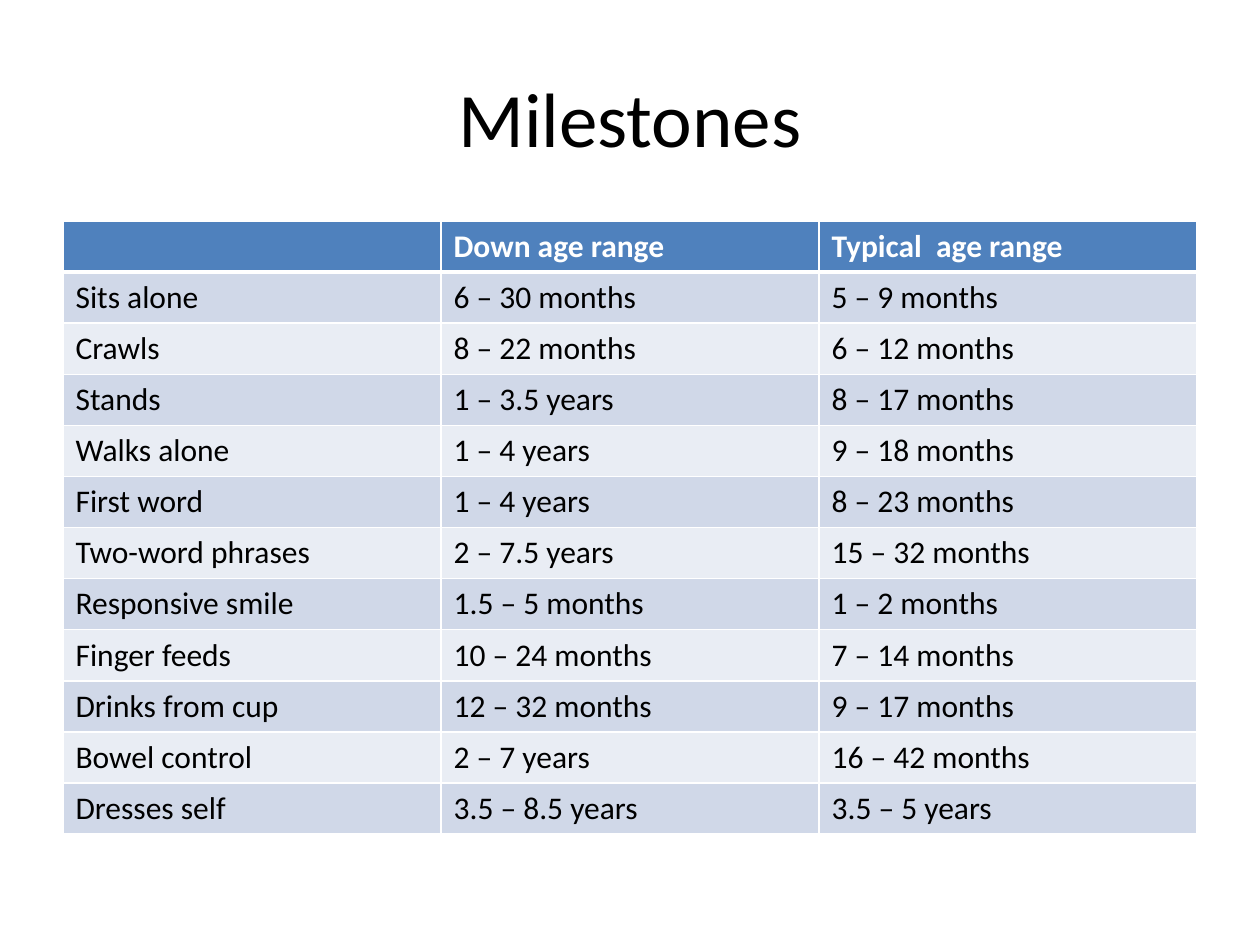
import pptx
import pptx.dml.color
import pptx.enum.text
import pptx.oxml.ns
import pptx.util
from lxml import etree

RGBColor = pptx.dml.color.RGBColor
WHITE = RGBColor(0xFF, 0xFF, 0xFF)
BLACK = RGBColor(0x00, 0x00, 0x00)
HEADER_BLUE = RGBColor(0x4F, 0x81, 0xBD)
BAND_DARK = RGBColor(0xD0, 0xD8, 0xE8)
BAND_LIGHT = RGBColor(0xE9, 0xED, 0xF4)

EMU_PER_PX = 914400 / 126
ROW_HEIGHT = 51
COLUMN_WIDTH = 378

MILESTONES = [
    ("", "Down age range", "Typical  age range"),
    ("Sits alone", "6 – 30 months", "5 – 9 months"),
    ("Crawls", "8 – 22 months", "6 – 12 months"),
    ("Stands", "1 – 3.5 years", "8 – 17 months"),
    ("Walks alone", "1 – 4 years", "9 – 18 months"),
    ("First word", "1 – 4 years", "8 – 23 months"),
    ("Two-word phrases", "2 – 7.5 years", "15 – 32 months"),
    ("Responsive smile", "1.5 – 5 months", "1 – 2 months"),
    ("Finger feeds", "10 – 24 months", "7 – 14 months"),
    ("Drinks from cup", "12 – 32 months", "9 – 17 months"),
    ("Bowel control", "2 – 7 years", "16 – 42 months"),
    ("Dresses self", "3.5 – 8.5 years", "3.5 – 5 years"),
]


def px(n):
    return pptx.util.Emu(round(n * EMU_PER_PX))


def write_text(tf, text, size=18, color=BLACK, bold=False, align=None):
    p = tf.paragraphs[0]
    p.alignment = align
    if not text:
        p.font.size = pptx.util.Pt(size)
        return
    r = p.add_run()
    r.text = text
    r.font.name = "Calibri"
    r.font.size = pptx.util.Pt(size)
    r.font.bold = bold
    r.font.color.rgb = color


def add_title(s, text):
    sp = s.shapes.title
    sp.left, sp.top, sp.width, sp.height = px(63), px(38), px(1134), px(157)
    tf = sp.text_frame
    tf.vertical_anchor = pptx.enum.text.MSO_ANCHOR.MIDDLE
    write_text(tf, text, size=44, align=pptx.enum.text.PP_ALIGN.CENTER)


def set_borders(cell, widths):
    qn = pptx.oxml.ns.qn
    tcPr = cell._tc.get_or_add_tcPr()
    for side, width in widths.items():
        ln = etree.SubElement(tcPr, qn(f"a:ln{side}"), w=str(pptx.util.Pt(width)))
        fill = etree.SubElement(ln, qn("a:solidFill"))
        etree.SubElement(fill, qn("a:srgbClr"), val=str(WHITE))


def format_cell(cell, text, row):
    header = row == 0
    set_borders(cell, {"L": 1, "R": 1, "T": 3 if row == 1 else 1, "B": 3 if header else 1})
    cell.fill.solid()
    band = BAND_DARK if row % 2 else BAND_LIGHT
    cell.fill.fore_color.rgb = HEADER_BLUE if header else band
    write_text(cell.text_frame, text, color=WHITE if header else BLACK, bold=header)


def add_milestone_table(s, rows):
    n_rows, n_cols = len(rows), len(rows[0])
    frame = s.shapes.add_table(n_rows, n_cols, px(63), px(221),
                               px(n_cols * COLUMN_WIDTH), px(n_rows * ROW_HEIGHT))
    table = frame.table
    for column in table.columns:
        column.width = px(COLUMN_WIDTH)
    for i, values in enumerate(rows):
        table.rows[i].height = px(ROW_HEIGHT)
        for j, text in enumerate(values):
            format_cell(table.cell(i, j), text, i)


def main():
    prs = pptx.Presentation()
    prs.slide_width, prs.slide_height = px(1260), px(945)
    s = prs.slides.add_slide(prs.slide_layouts[5])
    add_title(s, "Milestones")
    add_milestone_table(s, MILESTONES)
    prs.save("out.pptx")


if __name__ == "__main__":
    main()
